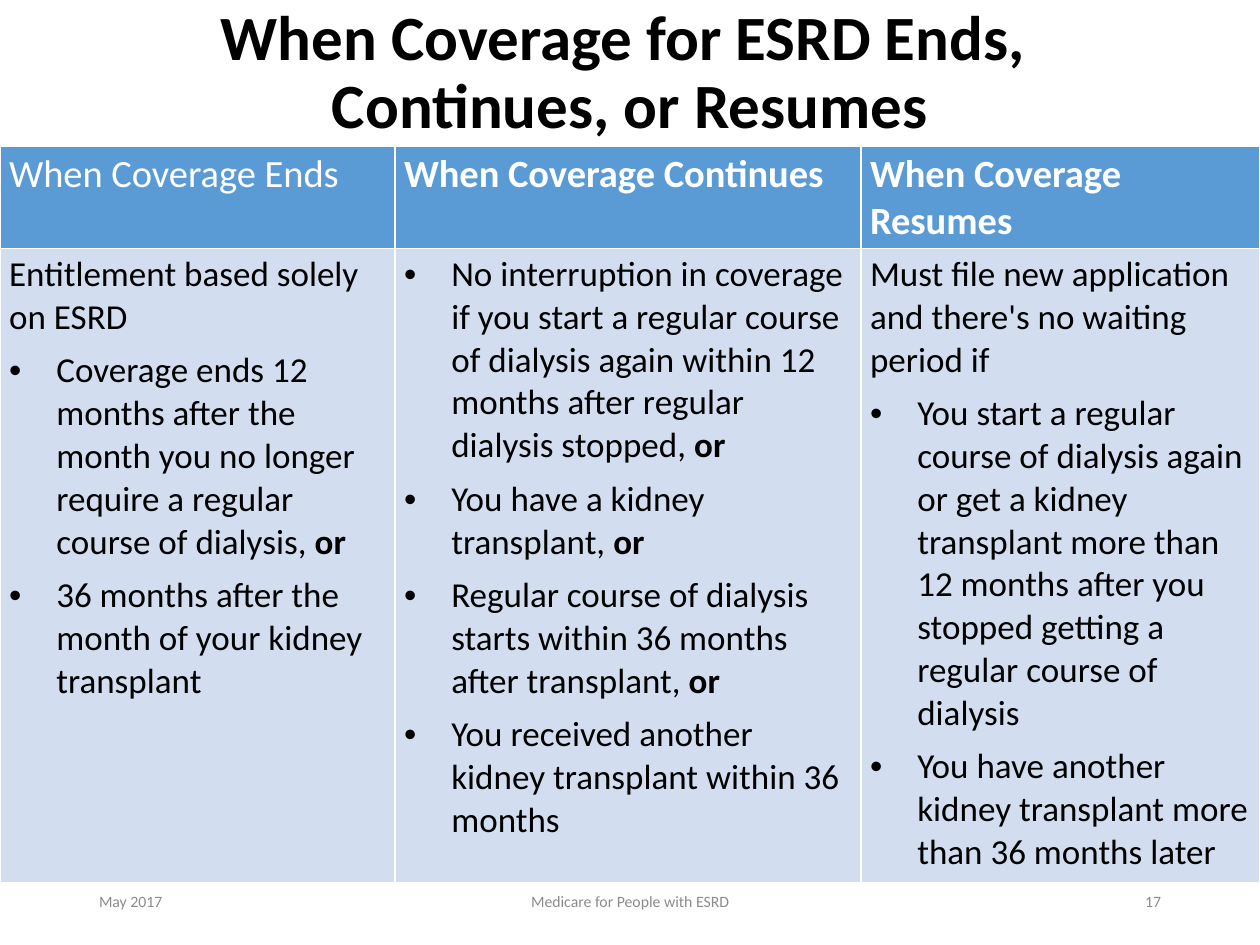
from dataclasses import dataclass

from lxml import etree
from pptx import Presentation
from pptx.dml.color import RGBColor
from pptx.enum.text import MSO_ANCHOR, PP_ALIGN
from pptx.oxml.ns import qn
from pptx.util import Pt

LEFT, CENTER, RIGHT = PP_ALIGN.LEFT, PP_ALIGN.CENTER, PP_ALIGN.RIGHT
MIDDLE = MSO_ANCHOR.MIDDLE
FONT = "Calibri"
BLACK = RGBColor(0x00, 0x00, 0x00)
WHITE = RGBColor(0xFF, 0xFF, 0xFF)
GRAY = RGBColor(0x8C, 0x8C, 0x8C)
BLUE = RGBColor(0x5B, 0x9B, 0xD5)
PALE_BLUE = RGBColor(0xD2, 0xDE, 0xEF)
INDENT = Pt(27)


@dataclass
class Label:
    text: str
    left: float
    width: float
    align: PP_ALIGN


@dataclass
class Item:
    text: str
    bullet: bool = True
    ending: str = ""


@dataclass
class Column:
    heading: str
    width: float
    items: list[Item]
    bold_heading: bool = True


COLUMNS = [
    Column("When Coverage Ends", 225.7, [
        Item("Entitlement based solely on ESRD", bullet=False),
        Item("Coverage ends 12 months after the month you no longer require "
             "a regular course of dialysis, ", ending="or"),
        Item("36 months after the month of your kidney transplant"),
    ], bold_heading=False),
    Column("When Coverage Continues", 266.3, [
        Item("No interruption in coverage if you start a regular course of dialysis "
             "again within 12 months after regular dialysis stopped, ", ending="or"),
        Item("You have a kidney transplant, ", ending="or"),
        Item("Regular course of dialysis starts within 36 months after transplant, ",
             ending="or"),
        Item("You received another kidney transplant within 36 months"),
    ]),
    Column("When Coverage Resumes", 228, [
        Item("Must file new application and there's no waiting period if", bullet=False),
        Item("You start a regular course of dialysis again or get a kidney transplant "
             "more than 12 months after you stopped getting a regular course of dialysis"),
        Item("You have another kidney transplant more than 36 months later"),
    ]),
]
FOOTERS = [
    Label("May 2017", 49.5, 162, LEFT),
    Label("Medicare for People with ESRD", 238.5, 243, CENTER),
    Label("17", 508.5, 162, RIGHT),
]
TITLE_LINES = ["When Coverage for ESRD Ends, ", "Continues, or Resumes"]


def add_run(p, text: str, size: float, color: RGBColor, bold: bool = False) -> None:
    r = p.add_run()
    r.text = text
    r.font.name = FONT
    r.font.size = Pt(size)
    r.font.bold = bold
    r.font.color.rgb = color


def add_box(s, left: float, top: float, width: float, height: float, align: PP_ALIGN):
    tf = s.shapes.add_textbox(Pt(left), Pt(top), Pt(width), Pt(height)).text_frame
    tf.word_wrap = True
    tf.vertical_anchor = MIDDLE
    p = tf.paragraphs[0]
    p.alignment = align
    return p


def add_bullet(p) -> None:
    pPr = p._p.get_or_add_pPr()
    pPr.set("marL", str(INDENT))
    pPr.set("indent", str(-INDENT))
    etree.SubElement(pPr, qn("a:buFont")).set("typeface", "Arial")
    etree.SubElement(pPr, qn("a:buChar")).set("char", "•")


def style_cell(cell, color: RGBColor) -> None:
    cell.margin_left = cell.margin_right = Pt(5.2)
    cell.margin_top = cell.margin_bottom = Pt(2.6)
    tcPr = cell._tc.get_or_add_tcPr()
    for side in ("a:lnL", "a:lnR", "a:lnT", "a:lnB"):
        ln = etree.SubElement(tcPr, qn(side), w=str(Pt(1)))
        fill = etree.SubElement(ln, qn("a:solidFill"))
        etree.SubElement(fill, qn("a:srgbClr"), val=str(WHITE))
    cell.fill.solid()
    cell.fill.fore_color.rgb = color


def fill_body(cell, items: list[Item]) -> None:
    tf = cell.text_frame
    for i, item in enumerate(items):
        p = tf.add_paragraph() if i else tf.paragraphs[0]
        if item.bullet:
            add_bullet(p)
        if i:
            p.space_before = Pt(6)
        add_run(p, item.text, 20, BLACK)
        if item.ending:
            add_run(p, item.ending, 20, BLACK, bold=True)


def add_coverage_table(s, columns: list[Column]) -> None:
    table = s.shapes.add_table(2, len(columns), Pt(0), Pt(83.5),
                               Pt(720), Pt(421)).table
    table.rows[0].height = Pt(58.5)
    table.rows[1].height = Pt(362.5)
    for i, column in enumerate(columns):
        table.columns[i].width = Pt(column.width)
        head, body = table.cell(0, i), table.cell(1, i)
        style_cell(head, BLUE)
        style_cell(body, PALE_BLUE)
        add_run(head.text_frame.paragraphs[0], column.heading, 22, WHITE,
                column.bold_heading)
        fill_body(body, column.items)


def main() -> None:
    prs = Presentation()
    prs.slide_width, prs.slide_height = Pt(720), Pt(540)
    s = prs.slides.add_slide(prs.slide_layouts[6])
    p = add_box(s, 49.5, 0, 621, 85, CENTER)
    p.line_spacing = 0.9
    for i, line in enumerate(TITLE_LINES):
        if i:
            p.add_line_break()
        add_run(p, line, 36, BLACK, bold=True)
    add_coverage_table(s, COLUMNS)
    for label in FOOTERS:
        p = add_box(s, label.left, 500.5, label.width, 29, label.align)
        add_run(p, label.text, 9, GRAY)
    prs.save("out.pptx")


if __name__ == "__main__":
    main()
